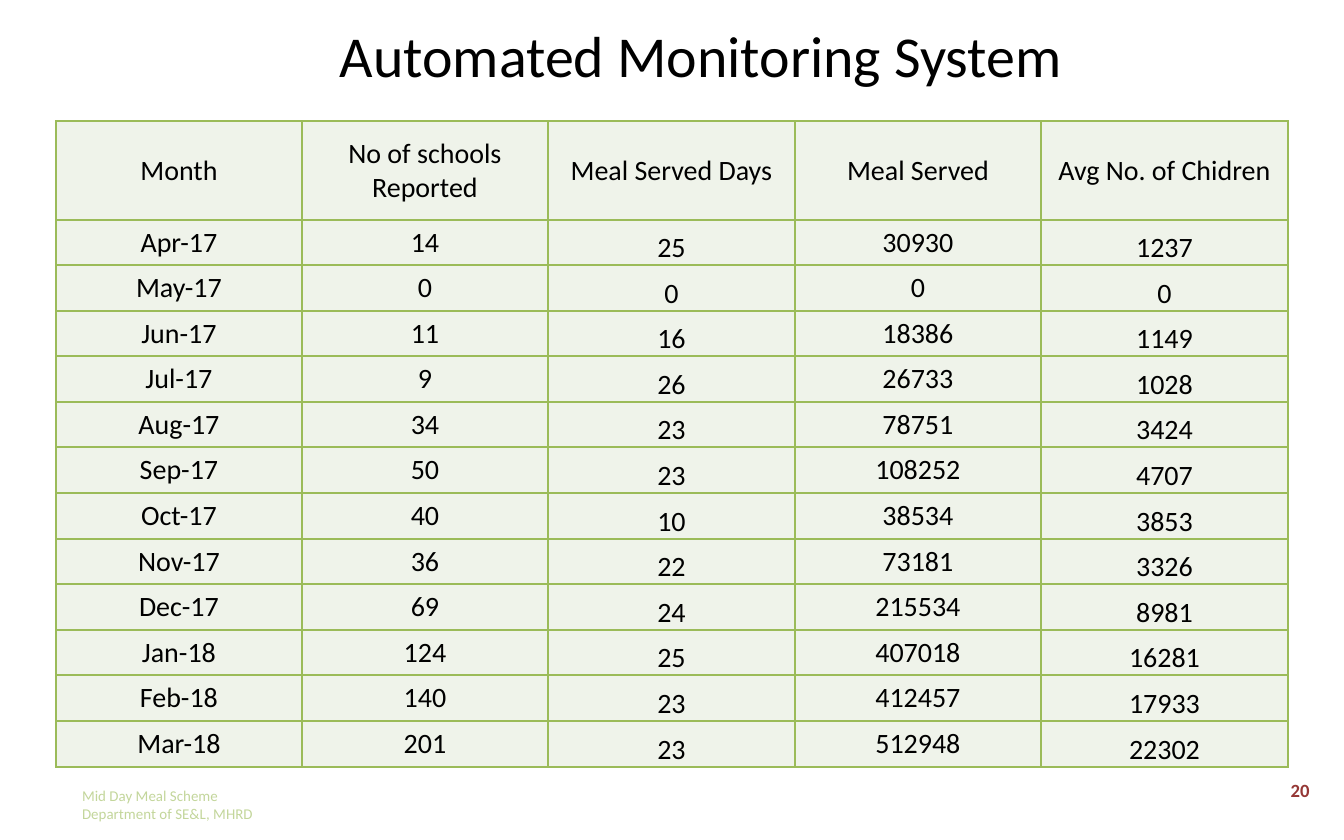
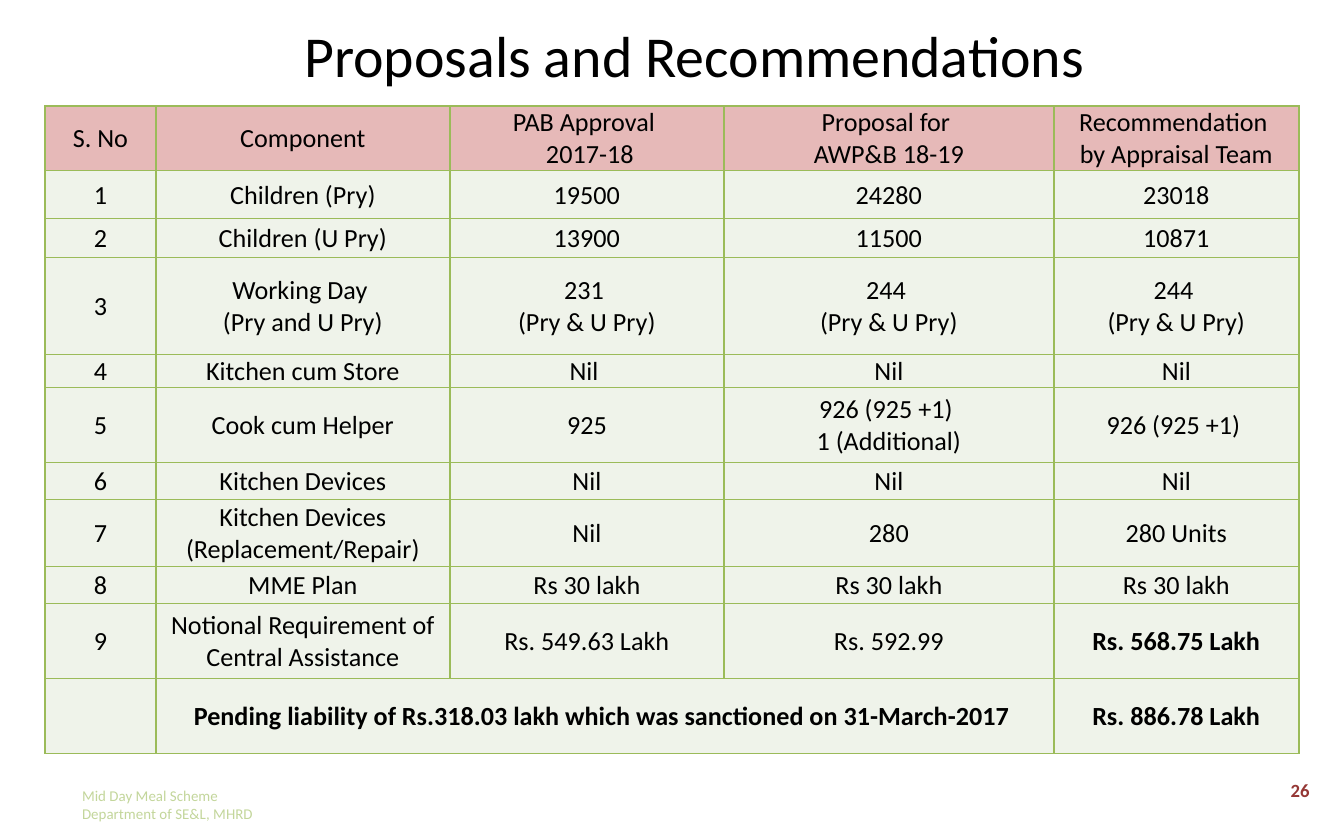
from copy import deepcopy

from lxml import etree
from pptx import Presentation
from pptx import util as u
from pptx.dml.color import RGBColor
from pptx.enum import text as t
from pptx.oxml.ns import qn

SCALE = 914400 / 134.4
FONT = "Calibri"
BLACK, GREEN, PALE = "000000", "9BBB59", "EFF3EA"
PINK, LIME, MAROON = "E6B9B8", "C3D69B", "953735"
MID, LOW = t.MSO_ANCHOR.MIDDLE, t.MSO_ANCHOR.BOTTOM
LEFT, CENTER = t.PP_ALIGN.LEFT, t.PP_ALIGN.CENTER

MEALS = [
    ("Month", "No of schools Reported", "Meal Served Days", "Meal Served",
     "Avg No. of Chidren"),
    ("Apr-17", 14, 25, 30930, 1237),
    ("May-17", 0, 0, 0, 0),
    ("Jun-17", 11, 16, 18386, 1149),
    ("Jul-17", 9, 26, 26733, 1028),
    ("Aug-17", 34, 23, 78751, 3424),
    ("Sep-17", 50, 23, 108252, 4707),
    ("Oct-17", 40, 10, 38534, 3853),
    ("Nov-17", 36, 22, 73181, 3326),
    ("Dec-17", 69, 24, 215534, 8981),
    ("Jan-18", 124, 25, 407018, 16281),
    ("Feb-18", 140, 23, 412457, 17933),
    ("Mar-18", 201, 23, 512948, 22302),
]

# \v is a line break inside a paragraph
PLANS = [
    ("S. No", "Component", "PAB Approval \v 2017-18",
     "Proposal for \vAWP&B 18-19", "Recommendation \vby Appraisal Team"),
    (1, "Children (Pry)", 19500, 24280, 23018),
    (2, "Children (U Pry)", 13900, 11500, 10871),
    (3, "Working Day \v(Pry and U Pry)", "231 \v(Pry & U Pry)",
     "244 \v(Pry & U Pry)", "244 \v(Pry & U Pry)"),
    (4, "Kitchen cum Store", "Nil ", "Nil", "Nil"),
    (5, "Cook cum Helper", 925, "926 (925 +1) \v1 (Additional)",
     "926 (925 +1) "),
    (6, "Kitchen Devices", "Nil", "Nil", "Nil"),
    (7, "Kitchen Devices (Replacement/Repair)", "Nil", 280, "280 Units"),
    (8, "MME Plan", "Rs 30 lakh", "Rs 30 lakh", "Rs 30 lakh"),
    (9, "Notional Requirement of Central Assistance", "Rs. 549.63 Lakh",
     "Rs. 592.99", "Rs. 568.75 Lakh"),
    ("", "Pending liability of Rs.318.03 lakh which was sanctioned on "
     "31-March-2017 ", "", "", "Rs. 886.78 Lakh"),
]


def px(n):
    return u.Emu(round(n * SCALE))


def rgb(code):
    return RGBColor.from_string(code)


def split(total, n):
    """Cut a length into n near-equal whole parts."""
    return [total * (i + 1) // n - total * i // n for i in range(n)]


def style(frame, size, color=BLACK, bold=False, align=CENTER):
    for para in frame.paragraphs:
        para.alignment = align
        for run in para.runs:
            font = run.font
            font.name, font.size, font.bold = FONT, u.Pt(size), bold
            font.color.rgb = rgb(color)
        # Line breaks take the run format, so line heights agree
        for br in para._p.findall(qn("a:br")):
            br.append(deepcopy(para._p.find(qn("a:r")).find(qn("a:rPr"))))


def fill_box(box, words, at, size, **look):
    box.left, box.top, box.width, box.height = map(px, at)
    frame = box.text_frame
    frame.text = words
    frame.word_wrap = True
    frame.auto_size = t.MSO_AUTO_SIZE.NONE
    frame.vertical_anchor = MID
    frame.margin_left = frame.margin_right = px(9)
    frame.margin_top = frame.margin_bottom = px(4)
    style(frame, size, **look)


def add_label(slide, words, at, size, **look):
    box = slide.shapes.add_textbox(0, 0, 0, 0)
    fill_box(box, words, at, size, **look)


def add_page(deck, title, number):
    slide = deck.slides.add_slide(deck.slide_layouts[5])
    fill_box(slide.shapes.title, title, (124, -1, 1153, 110), 31)
    add_label(slide, "Mid Day Meal Scheme\nDepartment of SE&L, MHRD",
              (73, 769, 433, 71), 8, color=LIME, align=LEFT)
    add_label(slide, str(number), (1255, 757, 90, 67), 10,
              color=MAROON, bold=True)
    return slide


def add_edges(cell):
    props = cell._tc.get_or_add_tcPr()
    for side in "LRTB":
        line = etree.SubElement(props, qn(f"a:ln{side}"), w=str(u.Pt(1)))
        solid = etree.SubElement(line, qn("a:solidFill"))
        etree.SubElement(solid, qn("a:srgbClr"), val=GREEN)


def set_cell(cell, words, size, fill, bold, anchor):
    cell.text = str(words)
    cell.margin_left = cell.margin_right = cell.margin_top = px(1)
    cell.margin_bottom = 0
    cell.vertical_anchor = anchor
    add_edges(cell)
    cell.fill.solid()
    cell.fill.fore_color.rgb = rgb(fill)
    style(cell.text_frame, size, bold=bold)


def add_grid(slide, data, spot, cols, rows, size, head=PALE, bold=(), low=()):
    """bold: (row, column) pairs; low: columns set to the bottom of body rows."""
    frame = slide.shapes.add_table(len(rows), len(cols), *map(px, spot),
                                   px(sum(cols)), px(sum(rows)))
    table = frame.table
    table.horz_banding = False
    for col, wide in zip(table.columns, cols):
        col.width = px(wide)
    for row, high in zip(table.rows, rows):
        row.height = px(high)
    for r, line in enumerate(data):
        for c, words in enumerate(line):
            set_cell(table.cell(r, c), words, size, PALE if r else head,
                     (r, c) in bold, LOW if r and c in low else MID)
    return table


def add_meals(deck):
    slide = add_page(deck, "Automated Monitoring System", 20)
    add_grid(slide, MEALS, (56, 121), split(1232, 5),
             [99] + split(547, 12), 15, low=(2, 4))


def add_plans(deck):
    slide = add_page(deck, "Proposals and Recommendations ", 26)
    cols = [111, 294, 274, 330, 245]
    rows = [64, 48, 39, 97, 33, 75, 37, 67, 37, 75, 75]
    table = add_grid(slide, PLANS, (45, 106), cols, rows, 14, head=PINK,
                     bold=((9, 4), (10, 1), (10, 4)))
    table.cell(10, 1).merge(table.cell(10, 3))


def main():
    deck = Presentation()
    deck.slide_width, deck.slide_height = px(1344), px(840)
    add_meals(deck)
    add_plans(deck)
    deck.save("out.pptx")


if __name__ == "__main__":
    main()
